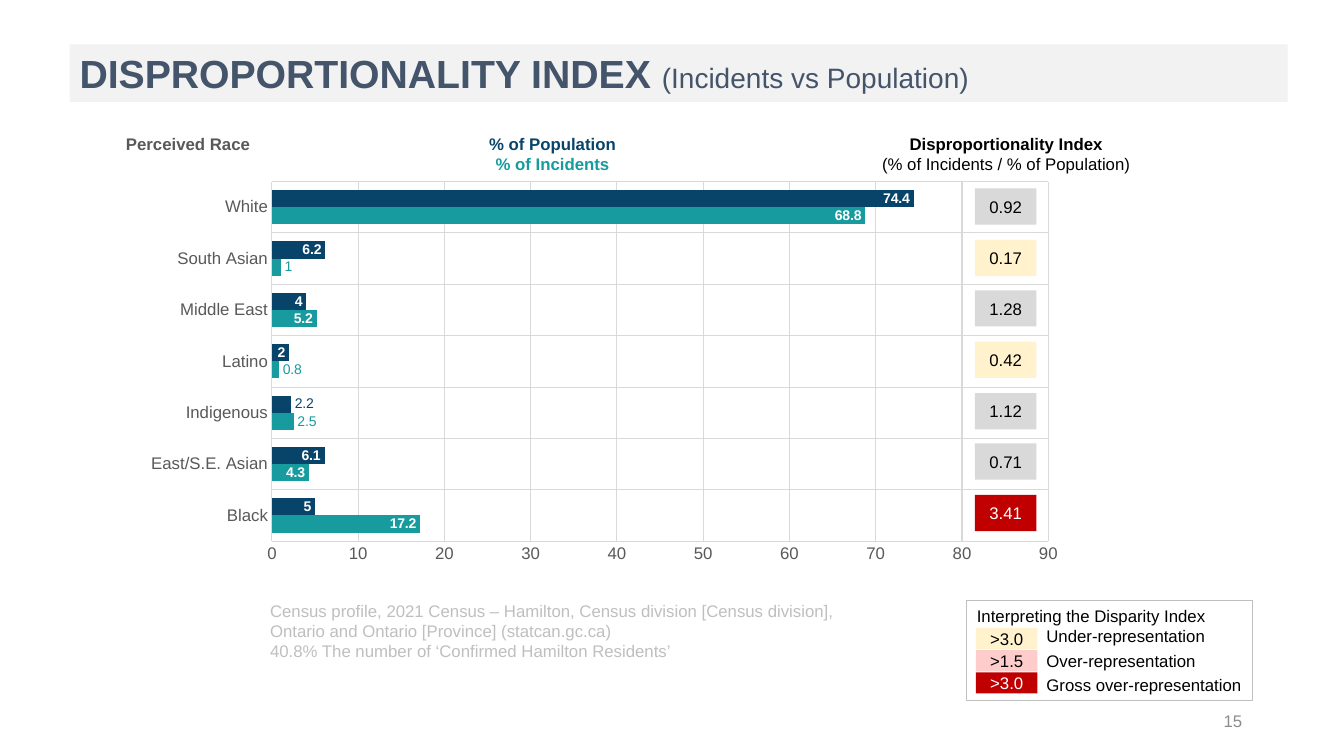
from lxml.etree import SubElement
from pptx import Presentation
from pptx.chart.data import CategoryChartData
from pptx.dml.color import RGBColor
from pptx.enum.chart import XL_CHART_TYPE as ChartType, XL_LABEL_POSITION as LabelPosition
from pptx.enum.chart import XL_TICK_MARK as TickMark
from pptx.enum.shapes import MSO_SHAPE as Shape
from pptx.enum.text import MSO_ANCHOR as Anchor, PP_ALIGN as Align
from pptx.oxml import parse_xml
from pptx.oxml.ns import nsdecls, qn
from pptx.util import Emu, Pt

# Content
FONT = "Arial"
COLORS = {
    "band": "F2F2F2", "title": "44546A", "population": "08446A", "incidents": "179B9E",
    "grid": "D9D9D9", "axis": "595959", "source": "BFBFBF", "number": "8C8C8C",
    "even": "D9D9D9", "under": "FFF2CC", "over": "FFCCCC", "gross": "C00000",
    "black": "000000", "white": "FFFFFF",
}
# From top to bottom: race, % of population, % of incidents, index, level
RACES = [
    ("White", 74.4, 68.8, "0.92", "even"),
    ("South Asian", 6.2, 1, "0.17", "under"),
    ("Middle East", 4, 5.2, "1.28", "even"),
    ("Latino", 2, 0.8, "0.42", "under"),
    ("Indigenous", 2.2, 2.5, "1.12", "even"),
    ("East/S.E. Asian", 6.1, 4.3, "0.71", "even"),
    ("Black", 5, 17.2, "3.41", "gross"),
]
# Races whose label stands outside the bar
OUTSIDE = {
    "incidents": ["South Asian", "Latino", "Indigenous"],
    "population": ["Indigenous"],
}
LEGEND = [
    (">3.0", "under", "Under-representation"),
    (">1.5", "over", "Over-representation"),
    (">3.0", "gross", "Gross over-representation"),
]
# Text boxes: box in px, alignment, paragraphs of (text, color, bold)
TEXTS = [
    ((111, 128, 147, 30), Align.RIGHT, [("Perceived Race", "axis", True)]),
    ((387, 128, 322, 50), Align.CENTER, [
        ("% of Population", "population", True), ("% of Incidents", "incidents", True)]),
    ((837, 128, 322, 50), Align.CENTER, [
        ("Disproportionality Index", "black", True),
        ("(% of Incidents / % of Population)", "black", False)]),
    ((258, 591, 617, 71), Align.LEFT, [
        ("Census profile, 2021 Census – Hamilton, Census division [Census division], "
         "Ontario and Ontario [Province] (statcan.gc.ca)", "source", False),
        ("40.8% The number of ‘Confirmed Hamilton Residents’", "source", False)]),
    ((942, 700, 300, 30), Align.RIGHT, [("15", "number", False)]),
]

# Layout, 100 px to the inch
EMU_PER_PX = 9144
SLIDE = (1333, 750)
TITLE_BOX = (69, 44, 1208, 57)
CHART_BOX = (97, 165, 965, 445)
PLOT = {"x": 0.179, "y": 0.034, "w": 0.798, "h": 0.802}
INDEX_LEFT, INDEX_FIRST, INDEX_LAST = 967, 187, 491
CHIP_WIDTH, INDEX_HEIGHT, KEY_HEIGHT = 61, 36, 21
LEGEND_BOX = (959, 596, 283, 99)
KEY_LEFT, KEY_TOP, KEY_PITCH, KEY_TAB = 968, 623, 22, 69


def px(value):
    return Emu(round(value * EMU_PER_PX))


def color(name):
    return RGBColor.from_string(COLORS[name])


def set_font(font, size, color_name, bold=False):
    for attribute, value in {"name": FONT, "size": Pt(size), "bold": bold}.items():
        setattr(font, attribute, value)
    font.color.rgb = color(color_name)


def add_run(paragraph, text, size, color_name, bold=False):
    run = paragraph.add_run()
    run.text = text
    set_font(run.font, size, color_name, bold)


def add_box(shapes, box, fill=None, line=None, anchor=Anchor.TOP):
    shape = shapes.add_shape(Shape.RECTANGLE, *map(px, box))
    shape.shadow.inherit = False
    if fill:
        shape.fill.solid()
        shape.fill.fore_color.rgb = color(fill)
    else:
        shape.fill.background()
    if line:
        shape.line.color.rgb = color(line)
        shape.line.width = Pt(0.75)
    else:
        shape.line.fill.background()
    shape.text_frame.vertical_anchor = anchor
    shape.text_frame.paragraphs[0].alignment = Align.LEFT
    return shape


def add_chip(shapes, left, top, height, text, level):
    shape = add_box(shapes, (left, top, CHIP_WIDTH, height), level, anchor=Anchor.MIDDLE)
    paragraph = shape.text_frame.paragraphs[0]
    paragraph.alignment = Align.CENTER
    add_run(paragraph, text, 12, "white" if level == "gross" else "black")


def add_index_chart(slide):
    rows = RACES[::-1]
    names = [row[0] for row in rows]
    data = CategoryChartData()
    data.categories = names
    data.add_series("% of Incidents", [row[2] for row in rows])
    data.add_series("% of Population", [row[1] for row in rows])
    chart = slide.shapes.add_chart(ChartType.BAR_CLUSTERED, *map(px, CHART_BOX), data).chart
    chart.has_legend = chart.has_title = False
    set_font(chart.font, 10, "black")

    # Axes and grid
    for axis in (chart.category_axis, chart.value_axis):
        axis.major_tick_mark = TickMark.NONE
        axis.has_major_gridlines = True
        axis.major_gridlines.format.line.color.rgb = color("grid")
        axis.major_gridlines.format.line.width = Pt(0.75)
        axis.format.line.fill.background()
        set_font(axis.tick_labels.font, 12, "axis")
    for attribute, value in {"minimum_scale": 0, "maximum_scale": 90, "major_unit": 10}.items():
        setattr(chart.value_axis, attribute, value)

    # Bars and labels
    plot = chart.plots[0]
    plot.gap_width, plot.overlap, plot.vary_by_categories = 100, 0, False
    for series, key in zip(plot.series, ("incidents", "population")):
        series.format.fill.solid()
        series.format.fill.fore_color.rgb = color(key)
        labels = series.data_labels
        labels.show_value = True
        labels.position = LabelPosition.INSIDE_END
        set_font(labels.font, 10, "white", True)
        for name in OUTSIDE[key]:
            label = series.points[names.index(name)].data_label
            set_font(label.font, 10, key)
            label.position = LabelPosition.OUTSIDE_END

    # Fixed inner plot area
    plot_area = chart._chartSpace.chart.plotArea
    for old in plot_area.findall(qn("c:layout")):
        plot_area.remove(old)
    sizes = "".join(f'<c:{side} val="{value}"/>' for side, value in PLOT.items())
    plot_area.insert(0, parse_xml(
        f'<c:layout {nsdecls("c")}><c:manualLayout><c:layoutTarget val="inner"/>'
        f'<c:xMode val="edge"/><c:yMode val="edge"/>{sizes}</c:manualLayout></c:layout>'))


def add_legend(slide):
    shapes = slide.shapes.add_group_shape().shapes
    frame = add_box(shapes, LEGEND_BOX, line="source").text_frame
    add_run(frame.paragraphs[0], "Interpreting the Disparity Index", 12, "black")
    for row, (limit, level, meaning) in enumerate(LEGEND):
        paragraph = frame.add_paragraph()
        paragraph.alignment = Align.LEFT
        paragraph.space_after = Pt(3)
        tabs = SubElement(paragraph._p.get_or_add_pPr(), qn("a:tabLst"))
        SubElement(tabs, qn("a:tab"), pos=str(px(KEY_TAB)), algn="l")
        add_run(paragraph, "\t" + meaning, 12, "black")
        add_chip(shapes, KEY_LEFT, KEY_TOP + row * KEY_PITCH, KEY_HEIGHT, limit, level)


def main():
    presentation = Presentation()
    presentation.slide_width, presentation.slide_height = map(px, SLIDE)
    slide = presentation.slides.add_slide(presentation.slide_layouts[6])

    # Title band
    title = add_box(slide.shapes, TITLE_BOX, "band").text_frame.paragraphs[0]
    add_run(title, "DISPROPORTIONALITY INDEX ", 28, "title", True)
    add_run(title, "(Incidents vs Population)", 20, "title")

    # Chart with its index column
    add_index_chart(slide)
    pitch = (INDEX_LAST - INDEX_FIRST) / (len(RACES) - 1)
    for row, (*_, index, level) in enumerate(RACES):
        top = round(INDEX_FIRST + row * pitch)
        add_chip(slide.shapes, INDEX_LEFT, top, INDEX_HEIGHT, index, level)

    # Headings, source and slide number
    for box, alignment, lines in TEXTS:
        frame = slide.shapes.add_textbox(*map(px, box)).text_frame
        frame.word_wrap = True
        for number, (text, color_name, bold) in enumerate(lines):
            paragraph = frame.add_paragraph() if number else frame.paragraphs[0]
            paragraph.alignment = alignment
            add_run(paragraph, text, 12, color_name, bold)

    add_legend(slide)
    presentation.save("out.pptx")


if __name__ == "__main__":
    main()
